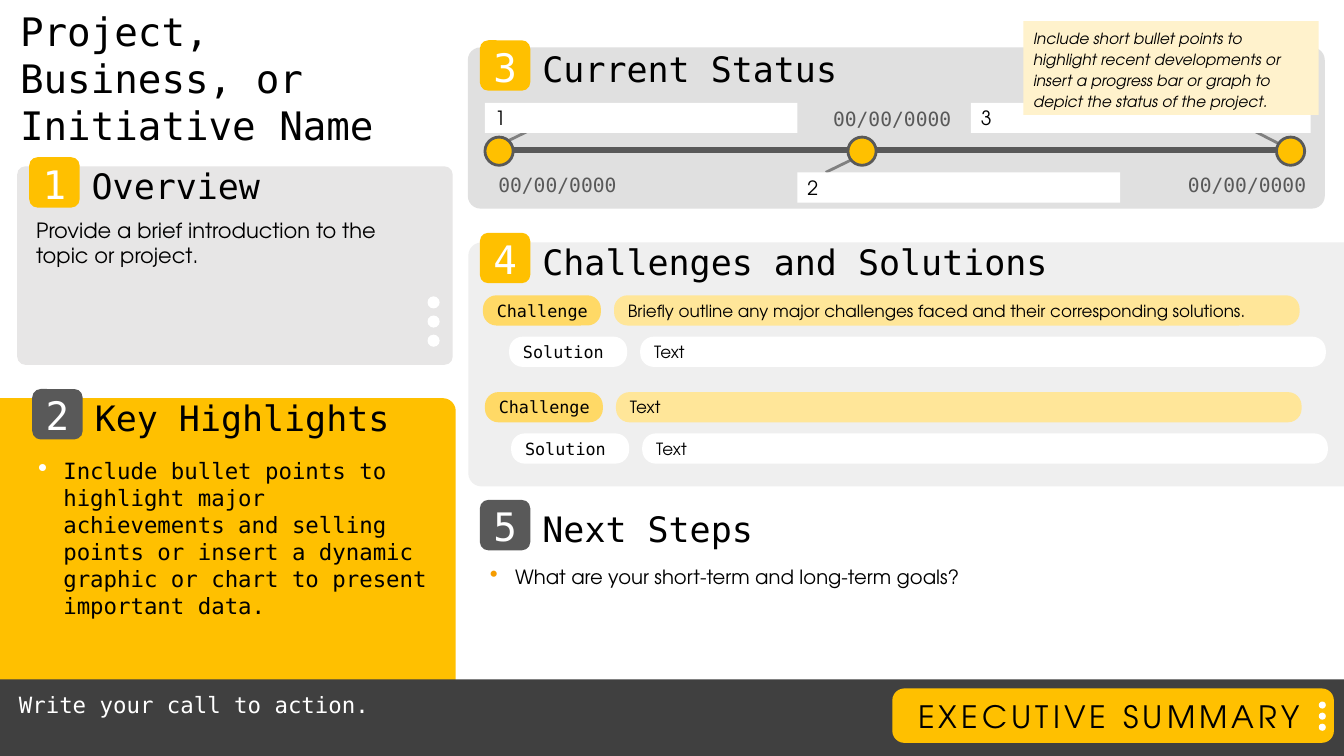
from lxml import etree
from pptx import Presentation
from pptx.dml.color import RGBColor
from pptx.enum.shapes import MSO_CONNECTOR, MSO_SHAPE
from pptx.enum.text import MSO_ANCHOR, PP_ALIGN
from pptx.oxml.ns import qn
from pptx.util import Inches, Pt

RECT, OVAL = MSO_SHAPE.RECTANGLE, MSO_SHAPE.OVAL
ROUND = MSO_SHAPE.ROUNDED_RECTANGLE
ROUND_ONE = MSO_SHAPE.ROUND_1_RECTANGLE
ROUND_TWO = MSO_SHAPE.ROUND_2_SAME_RECTANGLE
STRAIGHT = MSO_CONNECTOR.STRAIGHT
TOP, MIDDLE = MSO_ANCHOR.TOP, MSO_ANCHOR.MIDDLE
LEFT, CENTER = PP_ALIGN.LEFT, PP_ALIGN.CENTER

SANS, MONO = "TeX Gyre Adventor", "DejaVu Sans Mono"
BLACK, WHITE, GOLD, GRAY = "000000", "FFFFFF", "FFC000", "595959"
DEFAULT_INSETS = (0.1, 0.05, 0.1, 0.05)
NO_INSETS = (0, 0, 0, 0)


def rgb(color):
    return RGBColor.from_string(color)


def set_text(sp, text, size, font=SANS, color=BLACK, align=LEFT, anchor=TOP,
             insets=DEFAULT_INSETS, spacing=None, bullet=None):
    tf = sp.text_frame
    tf.word_wrap = True
    tf.vertical_anchor = anchor
    (tf.margin_left, tf.margin_top,
     tf.margin_right, tf.margin_bottom) = map(Inches, insets)
    tf.text = text
    p = tf.paragraphs[0]
    p.alignment = align
    if bullet:
        add_bullet(p, bullet)
    r = p.runs[0]
    r.font.size, r.font.name = Pt(size), font
    r.font.color.rgb = rgb(color)
    if spacing:
        r.font._element.set("spc", str(spacing * 100))
    return p


def add_bullet(p, color):
    p.space_after = Pt(6)
    pPr = p._p.get_or_add_pPr()
    pPr.set("marL", str(Inches(0.25)))
    pPr.set("indent", str(-Inches(0.25)))
    clr = etree.SubElement(pPr, qn("a:buClr"))
    etree.SubElement(clr, qn("a:srgbClr"), val=color)
    etree.SubElement(pPr, qn("a:buSzPct"), val="120000")
    etree.SubElement(pPr, qn("a:buChar"), char="•")


def add_box(s, kind, x, y, w, h, fill, adj=(), outline=None):
    sp = s.shapes.add_shape(kind, Inches(x), Inches(y), Inches(w), Inches(h))
    sp.shadow.inherit = False
    sp.fill.solid()
    sp.fill.fore_color.rgb = rgb(fill)
    for i, value in enumerate(adj):
        sp.adjustments[i] = value
    if outline:
        sp.line.color.rgb = rgb(outline)
        sp.line.width = Pt(2)
    else:
        sp.line.fill.background()
    return sp


def add_text(s, x, y, w, h, text, size, **style):
    sp = s.shapes.add_textbox(Inches(x), Inches(y), Inches(w), Inches(h))
    return set_text(sp, text, size, **style)


def add_line(s, x1, y1, x2, y2, color, width):
    line = s.shapes.add_connector(STRAIGHT, Inches(x1), Inches(y1),
                                  Inches(x2), Inches(y2))
    line.line.color.rgb = rgb(color)
    line.line.width = Pt(width)
    etree.SubElement(line._element.spPr, qn("a:effectLst"))


def add_dots(s, x, y, size, step):
    for i in range(3):
        add_box(s, OVAL, x, y + i * step, size, size, WHITE)


def add_heading(s, number, title, x, y, w, fill):
    """Numbered badge with the section title to its right."""
    add_text(s, x + 0.62, y + 0.1, w, 0.36, title, 25, font=MONO,
             anchor=MIDDLE, insets=NO_INSETS)
    add_box(s, ROUND, x, y, 0.5, 0.5, fill)
    add_text(s, x, y + 0.1, 0.5, 0.32, number, 28, font=MONO, color=WHITE,
             align=CENTER, anchor=MIDDLE, insets=NO_INSETS, spacing=-3)


def add_milestone_box(s, x, y, w, text):
    sp = add_box(s, RECT, x, y, w, 0.3, WHITE)
    set_text(sp, text, 14, anchor=MIDDLE, insets=(0.1, 0, 0.1, 0))


def add_pill_row(s, x, y, label, text, label_fill, text_fill):
    cells = ((x, 1.17, label, MONO, label_fill),
             (x + 1.3, 6.8, text, SANS, text_fill))
    for left, width, words, font, fill in cells:
        sp = add_box(s, ROUND, left, y, width, 0.3, fill, (0.448,))
        set_text(sp, words, 12, font=font, anchor=MIDDLE,
                 insets=(0.1, 0, 0, 0))


def add_status(s):
    add_box(s, ROUND, 4.64, 0.47, 8.5, 1.6, "E0E0E0", (0.079,))
    # Leaders from milestones to their boxes
    for x1, y1, x2, y2 in ((12.81, 1.49, 12.42, 1.29),
                           (8.19, 1.71, 8.58, 1.52),
                           (4.87, 1.48, 5.26, 1.29)):
        add_line(s, x1, y1, x2, y2, "808080", 2)
    add_heading(s, "3", "Current Status", 4.76, 0.4, 4.11, GOLD)
    # Timeline: marker, date position, box position
    add_line(s, 4.94, 1.49, 12.9, 1.49, GRAY, 4)
    milestones = ((4.81, 4.76, 1.67, 4.81, 1.02, 3.1),
                  (8.41, 8.08, 1.01, 7.91, 1.71, 3.2),
                  (12.66, 11.6, 1.67, 9.63, 1.02, 3.37))
    for i, (dot_x, date_x, date_y, x, y, w) in enumerate(milestones, 1):
        add_box(s, OVAL, dot_x, 1.36, 0.28, 0.28, GOLD, outline=GRAY)
        add_text(s, date_x, date_y, 1.54, 0.34, "00/00/0000", 14, font=MONO,
                 color=GRAY, align=CENTER)
        add_milestone_box(s, x, y, w, str(i))
    # Hint note
    note = add_box(s, RECT, 10.15, 0.21, 2.93, 0.93, "FFF2CC")
    p = set_text(note, "Include short bullet points to highlight recent "
                 "developments or insert a progress bar or graph to depict "
                 "the status of the project.", 11)
    p.line_spacing = 1.15
    p.runs[0].font.italic = True


def add_challenges(s):
    panel = add_box(s, ROUND_TWO, 7.78, -0.73, 2.42, 8.69, "EFEFEF",
                    (0.054, 0))
    panel.rotation = 270
    add_heading(s, "4", "Challenges and Solutions", 4.76, 2.31, 5.73, GOLD)
    outline = ("Briefly outline any major challenges faced and their "
               "corresponding solutions.")
    for x, y, challenge in ((4.79, 2.93, outline), (4.81, 3.89, "Text")):
        add_pill_row(s, x, y, "Challenge", challenge, "FFD966", "FFE699")
        add_pill_row(s, x + 0.26, y + 0.41, "Solution", "Text", WHITE, WHITE)


def add_left_column(s):
    add_text(s, 0.2, 0.07, 4.04, 1.26, "Project, Business, or Initiative Name",
             28, font=MONO, insets=NO_INSETS)
    # Overview
    add_box(s, ROUND, 0.17, 1.65, 4.32, 1.97, "E7E6E6", (0.042,))
    add_text(s, 0.26, 2.11, 3.89, 0.61,
             "Provide a brief introduction to the topic or project.", 15)
    add_heading(s, "1", "Overview", 0.29, 1.56, 2.26, GOLD)
    add_dots(s, 4.24, 2.94, 0.12, 0.19)
    # Key highlights
    add_box(s, ROUND_ONE, 0, 3.95, 4.52, 3.55, GOLD, (0.036,))
    add_text(s, 0.28, 4.49, 4.11, 1.72,
             "Include bullet points to highlight major achievements and "
             "selling points or insert a dynamic graphic or chart to present "
             "important data.", 16, font=MONO, bullet=WHITE)
    add_heading(s, "2", "Key Highlights", 0.32, 3.86, 3.21, GRAY)


def add_next_steps(s):
    add_text(s, 4.76, 5.56, 8.45, 0.34,
             "What are your short-term and long-term goals?", 14,
             bullet="F59C00")
    add_heading(s, "5", "Next Steps", 4.76, 4.96, 3.21, GRAY)


def add_footer(s):
    add_box(s, RECT, 0, 6.74, 13.33, 0.76, "404040")
    add_text(s, 0.09, 6.81, 8.36, 0.37, "Write your call to action.", 16,
             font=MONO, color=WHITE)
    add_box(s, ROUND, 8.85, 6.83, 4.38, 0.54, GOLD, (0.221,))
    add_text(s, 8.85, 6.87, 4.3, 0.47, "EXECUTIVE SUMMARY", 22, align=CENTER,
             spacing=3)
    add_dots(s, 13.08, 6.96, 0.07, 0.11)


def main():
    prs = Presentation()
    prs.slide_width, prs.slide_height = Inches(13.33), Inches(7.5)
    s = prs.slides.add_slide(prs.slide_layouts[6])
    add_left_column(s)
    add_status(s)
    add_challenges(s)
    add_next_steps(s)
    add_footer(s)
    prs.save("out.pptx")


if __name__ == "__main__":
    main()
